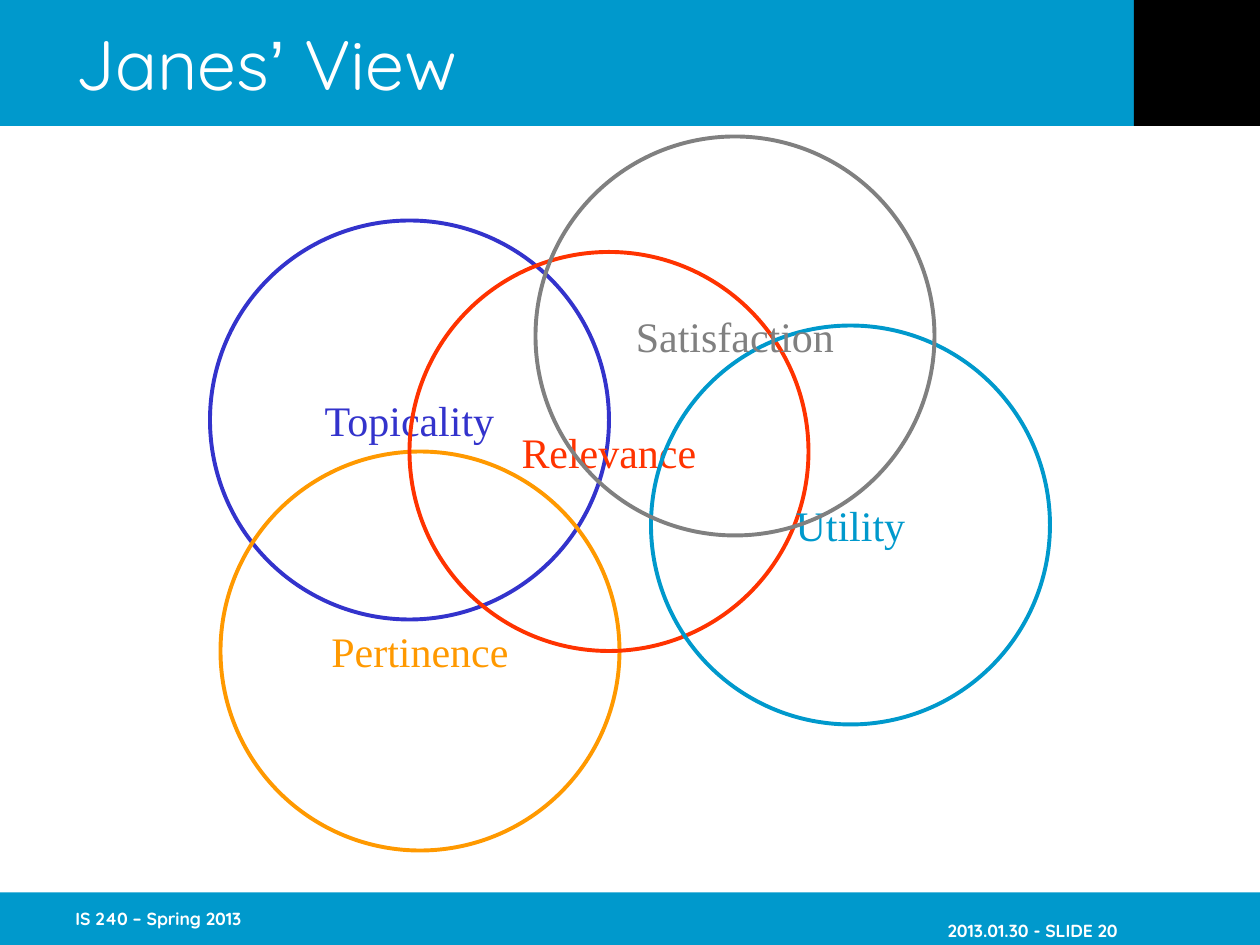
from pptx import Presentation
from pptx.dml.color import RGBColor
from pptx.enum.shapes import MSO_SHAPE
from pptx.enum.text import MSO_ANCHOR, PP_ALIGN
from pptx.util import Inches, Pt

RECT, OVAL = MSO_SHAPE.RECTANGLE, MSO_SHAPE.OVAL
MIDDLE = MSO_ANCHOR.MIDDLE
LEFT, CENTER, RIGHT = PP_ALIGN.LEFT, PP_ALIGN.CENTER, PP_ALIGN.RIGHT

COLORS = {
    "sky": "0099CC", "black": "000000", "white": "FFFFFF", "blue": "3333CC",
    "amber": "FF9900", "red": "FF3300", "gray": "808080",
}
COLS, ROWS = 120, 90
SIZE = 38  # circle diameter in grid units
HEAD, SANS, SERIF = "Quicksand", "Arial", "Times New Roman"
INSET = (0.1, 0.05, 0.1, 0.05)

# label, colour, column, row
CIRCLES = [
    ("Topicality", "blue", 20, 21),
    ("Pertinence", "amber", 21, 43),
    ("Relevance", "red", 39, 24),
    ("Utility", "sky", 62, 31),
    ("Satisfaction", "gray", 51, 13),
]


class Deck:
    def __init__(self):
        self.prs = Presentation()
        self.prs.slide_width, self.prs.slide_height = Inches(10), Inches(7.5)
        self.slide = self.prs.slides.add_slide(self.prs.slide_layouts[6])

    def place(self, col, row, wide, high):
        """Turn grid units into lengths on the slide."""
        x, y = self.prs.slide_width / COLS, self.prs.slide_height / ROWS
        return [round(n) for n in (col * x, row * y, wide * x, high * y)]

    def color(self, name):
        return RGBColor.from_string(COLORS[name])

    def label(self, frame, runs, size, color, align=LEFT, bold=False,
              wrap=True, inset=INSET):
        """Fill a text frame with (text, font) runs."""
        frame.word_wrap = wrap
        frame.vertical_anchor = MIDDLE
        (frame.margin_left, frame.margin_top,
         frame.margin_right, frame.margin_bottom) = map(Inches, inset)
        para = frame.paragraphs[0]
        para.alignment = align
        for text, face in runs:
            run = para.add_run()
            run.text = text
            font = run.font
            font.name, font.size, font.bold = face, Pt(size), bold
            font.color.rgb = self.color(color)

    def bar(self, box, color):
        shape = self.slide.shapes.add_shape(RECT, *self.place(*box))
        shape.shadow.inherit = False
        shape.fill.solid()
        shape.fill.fore_color.rgb = self.color(color)
        shape.line.fill.background()

    def text(self, box, runs, size, **style):
        shape = self.slide.shapes.add_textbox(*self.place(*box))
        self.label(shape.text_frame, runs, size, "white", **style)

    def circle(self, name, color, col, row):
        box = self.place(col, row, SIZE, SIZE)
        shape = self.slide.shapes.add_shape(OVAL, *box)
        shape.shadow.inherit = False
        shape.fill.background()
        shape.line.color.rgb = self.color(color)
        shape.line.width = Pt(2.25)
        self.label(shape.text_frame, [(name, SERIF)], 24, color,
                   align=CENTER, wrap=False)


def main():
    deck = Deck()
    deck.bar((0, 0, COLS, 12), "sky")
    deck.bar((0, 85, COLS, 5), "sky")
    deck.bar((108, 0, 12, 12), "black")
    deck.text((89, 85, 25, 5), [("2013.01.30 - SLIDE 20", HEAD)], 10,
              align=RIGHT, bold=True, inset=(0.1, 0.21, 0.63, 0.03))
    deck.text((6, 85, 25, 5), [("IS 240 – Spring 2013", HEAD)], 10,
              bold=True, inset=(0.1, 0.05, 0, 0.05))
    deck.text((6, 0, 102, 12),
              [("Janes", HEAD), ("’", SANS), (" View", HEAD)], 40)
    for item in CIRCLES:
        deck.circle(*item)
    deck.prs.save("out.pptx")


if __name__ == "__main__":
    main()
